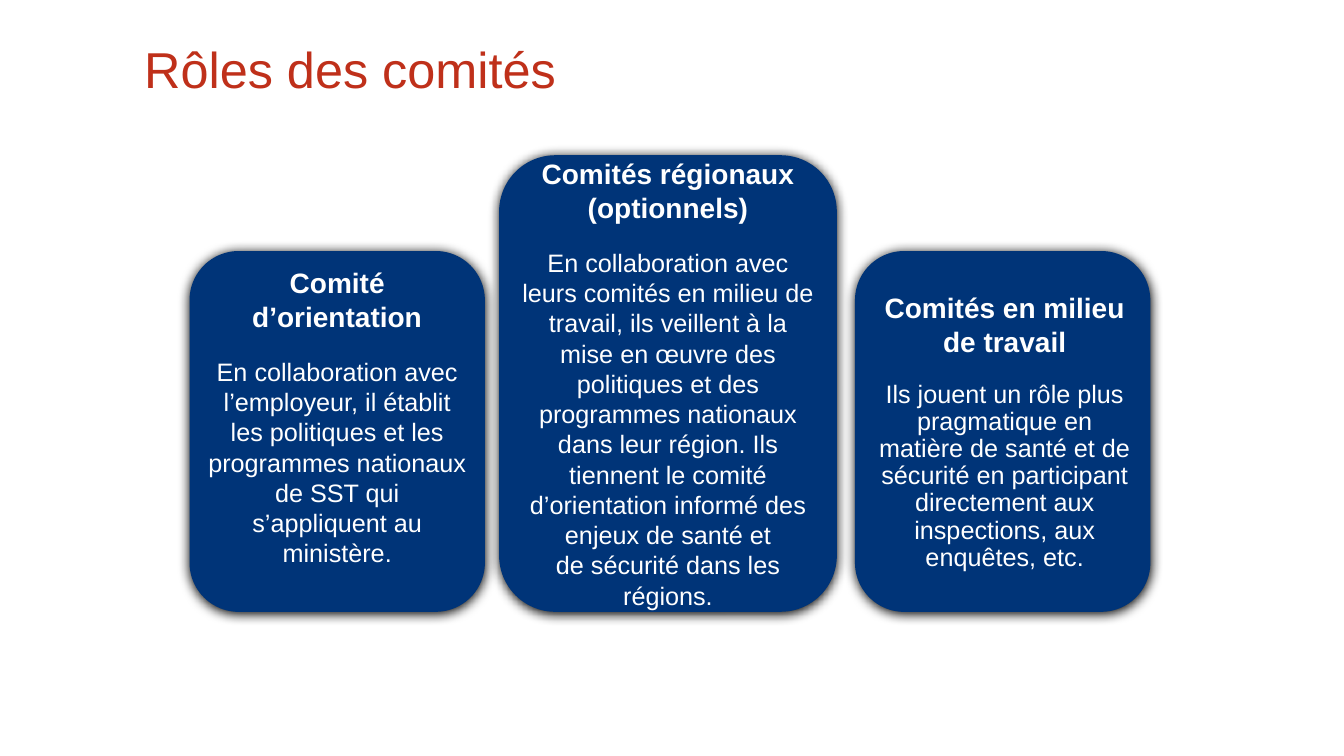
"""Build the slide on the roles of the committees."""
import pptx
import pptx.util
import pptx.dml.color
import pptx.enum.shapes
import pptx.enum.text
import pptx.oxml
from pptx.util import Inches, Pt

NBSP = chr(160)
TITLE = "Rôles des comités"
COMMITTEES = [
    {"name": "Comité d’orientation",
     "role": "En collaboration avec l’employeur, il établit les politiques et les "
             "programmes nationaux de SST qui s’appliquent au ministère.",
     "left": 1.88, "width": 2.93, "height": 3.58,
     "inset_left": 0.04, "inset_bottom": 0.34, "spacing": 1.0},
    {"name": "Comités régionaux (optionnels)",
     "role": "En collaboration avec leurs comités en milieu de travail, ils veillent à la "
             "mise en œuvre des politiques et des programmes nationaux dans leur région. "
             "Ils tiennent le comité d’orientation informé des enjeux de santé et "
             f"de{NBSP}sécurité dans les régions.",
     "left": 4.95, "width": 3.35, "height": 4.53,
     "inset_left": 0.04, "inset_bottom": 0.05, "spacing": 1.0},
    {"name": f"Comités en milieu de{NBSP}travail",
     "role": "Ils jouent un rôle plus pragmatique en matière de santé et de sécurité en "
             "participant directement aux inspections, aux enquêtes, etc.",
     "left": 8.48, "width": 2.93, "height": 3.58,
     "inset_left": 0.08, "inset_bottom": 0.05, "spacing": 0.9},
]
CARD_BOTTOM = 6.07
RED, BLUE, WHITE = "BF301A", "003478", "FFFFFF"
SHADOW = ('<a:outerShdw xmlns:a="http://schemas.openxmlformats.org/drawingml/2006/main" '
          'blurRad="%d" dist="%d" dir="5400000" algn="ctr" rotWithShape="0">'
          '<a:srgbClr val="000000"/></a:outerShdw>' % (Pt(8.5), Pt(1)))


def rgb(value):
    return pptx.dml.color.RGBColor.from_string(value)


def write(p, text, size, color, align, bold=False, spacing=1.0):
    p.text = text
    p.alignment = align
    p.line_spacing = spacing
    for r in p.runs:
        r.font.name = "Arial"
        r.font.size = Pt(size)
        r.font.bold = bold
        r.font.color.rgb = rgb(color)


def add_card(s, card):
    sp = s.shapes.add_shape(
        pptx.enum.shapes.MSO_SHAPE.ROUNDED_RECTANGLE,
        Inches(card["left"]), Inches(CARD_BOTTOM - card["height"]),
        Inches(card["width"]), Inches(card["height"]))
    sp.fill.solid()
    sp.fill.fore_color.rgb = rgb(BLUE)
    sp.line.fill.background()
    sp.shadow.inherit = False
    effects = sp.element.spPr.find(pptx.oxml.ns.qn("a:effectLst"))
    effects.append(pptx.oxml.parse_xml(SHADOW))
    tf = sp.text_frame
    tf.word_wrap = True
    tf.vertical_anchor = pptx.enum.text.MSO_ANCHOR.MIDDLE
    tf.margin_left = Inches(card["inset_left"])
    tf.margin_right = Inches(0.04)
    tf.margin_top = Inches(0.05)
    tf.margin_bottom = Inches(card["inset_bottom"])
    center = pptx.enum.text.PP_ALIGN.CENTER
    write(tf.paragraphs[0], card["name"], 20, WHITE, center, bold=True)
    p = tf.add_paragraph()
    write(p, card["role"], 18, WHITE, center, spacing=card["spacing"])
    p.space_before = Pt(16.5)


def main():
    prs = pptx.Presentation()
    prs.slide_width, prs.slide_height = Inches(13.33), Inches(7.5)
    s = prs.slides.add_slide(prs.slide_layouts[5])
    title = s.shapes.title
    title.left, title.top = Inches(1.33), Inches(0.35)
    title.width, title.height = Inches(9), Inches(0.73)
    title.text_frame.vertical_anchor = pptx.enum.text.MSO_ANCHOR.MIDDLE
    write(title.text_frame.paragraphs[0], TITLE, 36, RED,
          pptx.enum.text.PP_ALIGN.LEFT, spacing=0.9)
    for card in COMMITTEES:
        add_card(s, card)
    prs.save("out.pptx")


if __name__ == "__main__":
    main()
